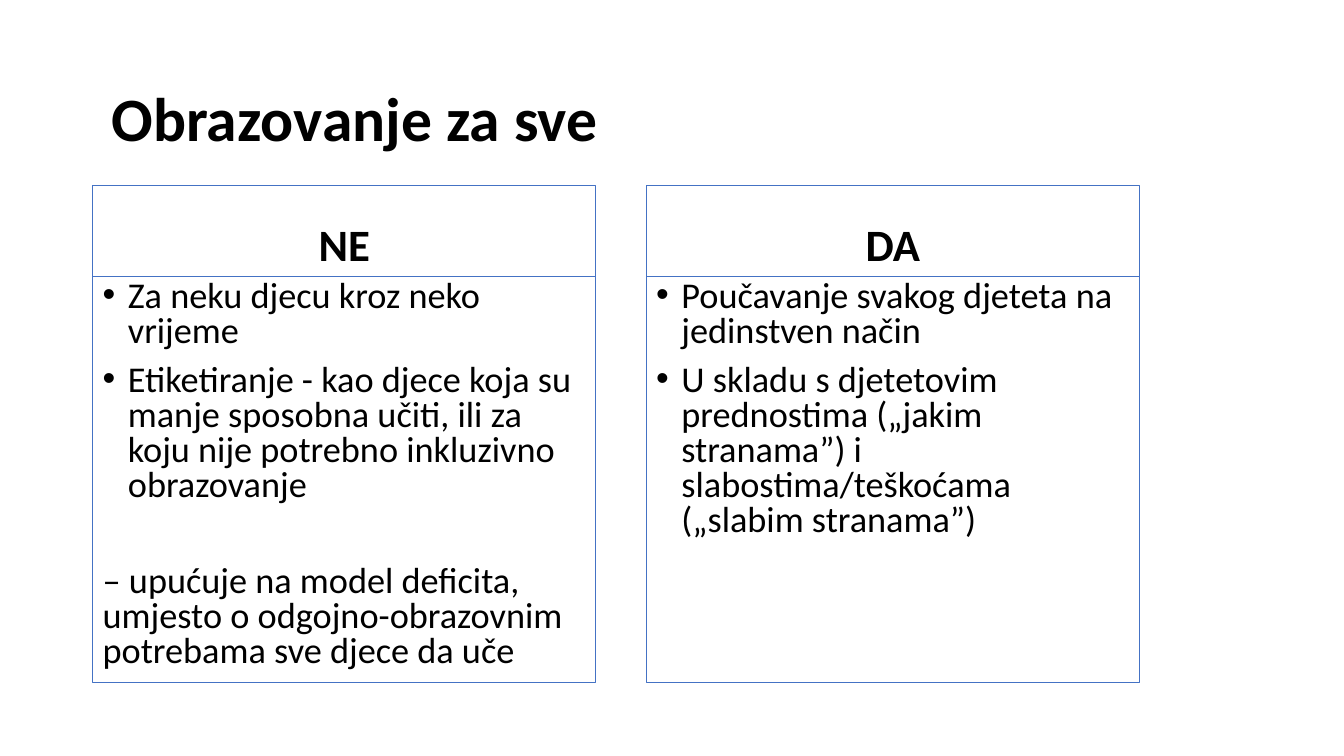
from lxml.etree import SubElement
from pptx import Presentation
from pptx.dml.color import RGBColor
from pptx.enum.shapes import MSO_SHAPE as Shape
from pptx.enum.text import MSO_ANCHOR as Anchor, PP_ALIGN as Align
from pptx.oxml.ns import qn
from pptx.util import Pt

PX = 9144  # 100 px to the inch
INDENT = 25
LEFT, TOP, HEADER_HEIGHT, BODY_HEIGHT = 92, 184, 90, 403


def color(value):
    return RGBColor.from_string(value)


def add_text(shape, lines, size, bold=False, align=Align.LEFT, anchor=Anchor.TOP,
             line_spacing=0.9):
    """Fill the shape with (text, space before, bulleted) lines."""
    frame = shape.text_frame
    frame.word_wrap = True
    frame.vertical_anchor = anchor
    for index, (text, space_before, bulleted) in enumerate(lines):
        paragraph = frame.paragraphs[0] if index == 0 else frame.add_paragraph()
        paragraph.text = text
        paragraph.alignment = align
        paragraph.line_spacing = line_spacing
        paragraph.space_before = Pt(space_before)
        font = paragraph.font
        font.name, font.size, font.bold = "Calibri", Pt(size), bold
        font.color.rgb = color("000000")
        if bulleted:
            properties = paragraph._p.get_or_add_pPr()
            properties.set("marL", str(INDENT * PX))
            properties.set("indent", str(-INDENT * PX))
            bullet_font = SubElement(properties, qn("a:buFont"))
            bullet_font.set("typeface", "Arial")
            bullet = SubElement(properties, qn("a:buChar"))
            bullet.set("char", "•")
            # The schema wants the default run properties after the bullet.
            properties.append(properties.find(qn("a:defRPr")))


presentation = Presentation()
presentation.slide_width = 1333 * PX
presentation.slide_height = 750 * PX
slide = presentation.slides.add_slide(presentation.slide_layouts[6])

title = slide.shapes.add_textbox(101 * PX, 48 * PX, 1150 * PX, 145 * PX)
add_text(title, [("Obrazovanje za sve", 0, False)], 44, bold=True, anchor=Anchor.MIDDLE)

columns = [
    (LEFT, 499, "NE", [
        ("Za neku djecu kroz neko vrijeme", 10, True),
        ("Etiketiranje - kao djece koja su manje sposobna učiti, ili za koju nije "
         "potrebno inkluzivno obrazovanje", 10, True),
        ("– upućuje na model deficita, umjesto o odgojno-obrazovnim potrebama "
         "sve djece da uče", 44, False),
    ]),
    (641, 489, "DA", [
        ("Poučavanje svakog djeteta na jedinstven način", 10, True),
        ("U skladu s djetetovim prednostima („jakim stranama”) i "
         "slabostima/teškoćama („slabim stranama”)", 10, True),
    ]),
]

for left, width, heading, points in columns:
    boxes = []
    for top, height in ((TOP, HEADER_HEIGHT), (TOP + HEADER_HEIGHT, BODY_HEIGHT)):
        box = slide.shapes.add_shape(Shape.RECTANGLE, left * PX, top * PX,
                                     width * PX, height * PX)
        box.shadow.inherit = False
        box.fill.background()
        box.line.color.rgb = color("4472C4")
        box.line.width = Pt(0.75)
        boxes.append(box)
    header, body = boxes
    add_text(header, [(heading, 10, False)], 32, bold=True, align=Align.CENTER,
             anchor=Anchor.BOTTOM)
    add_text(body, points, 25.9, line_spacing=0.8)

presentation.save("out.pptx")
